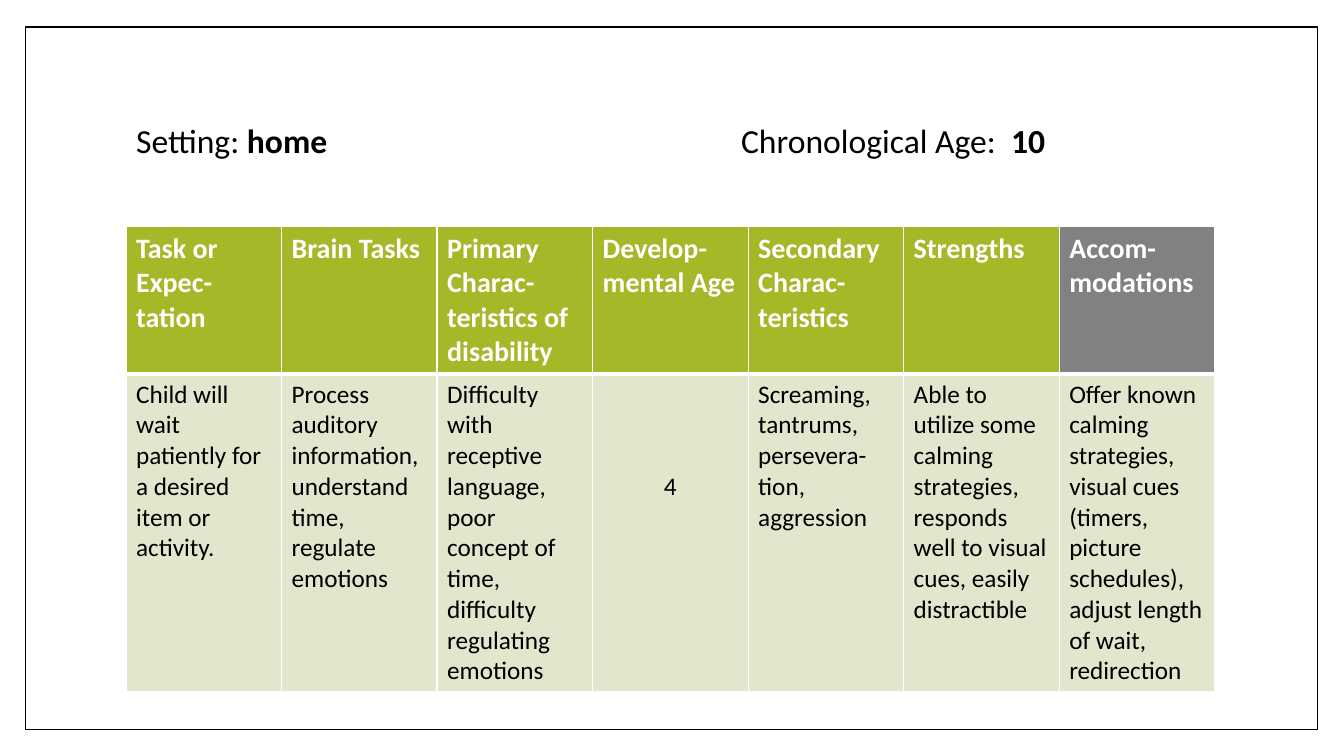
from dataclasses import dataclass

from lxml import etree
from pptx import Presentation
from pptx.dml import color as dml
from pptx.enum import shapes, text
from pptx.oxml import ns
from pptx.util import Inches, Pt

HUES = {"ink": "000000", "paper": "FFFFFF", "green": "A6B727", "gray": "818183", "pale": "E1E6CD"}
LEFT, WIDTH = 1.25, 10.8
HEAD_H, BODY_H = 1.46, 3.15
HEAD = {"size": Pt(20), "bold": True, "name": "Calibri"}
BODY = {"size": Pt(18), "bold": False, "name": "Calibri"}
TITLE = {"size": Pt(24), "name": "Calibri"}


@dataclass
class Column:
    head: str
    body: str
    hue: str = "green"
    align: int = text.PP_ALIGN.LEFT
    top: float = 0.05


COLUMNS = [
    Column("Task or Expec-tation", "Child will wait patiently for a desired item or activity."),
    Column("Brain Tasks", "Process auditory information, understand time, regulate emotions"),
    Column("Primary Charac-teristics of disability",
           "Difficulty with receptive language, poor concept of time, difficulty regulating emotions"),
    Column("Develop-mental Age", "4", align=text.PP_ALIGN.CENTER, top=0.97),
    Column("Secondary Charac-teristics", "Screaming, tantrums, persevera-tion, aggression"),
    Column("Strengths",
           "Able to utilize some calming strategies, responds well to visual cues, easily distractible"),
    Column("Accom-modations",
           "Offer known calming strategies,\nvisual cues (timers, picture schedules), "
           "adjust length of wait, redirection", hue="gray"),
]


def rgb(hue: str) -> dml.RGBColor:
    return dml.RGBColor.from_string(HUES[hue])


def style(font, values: dict, hue: str) -> None:
    for key, value in values.items():
        setattr(font, key, value)
    font.color.rgb = rgb(hue)


def edge(cell, sides: dict) -> None:
    props = cell._tc.get_or_add_tcPr()
    for spot, (side, width) in enumerate(sides.items()):
        line = etree.Element(ns.qn(f"a:ln{side}"), w=str(Pt(width)))
        fill = etree.SubElement(line, ns.qn("a:solidFill"))
        etree.SubElement(fill, ns.qn("a:srgbClr"), val=HUES["paper"])
        props.insert(spot, line)


def fill_cell(cell, words: str, values: dict, ink: str, hue: str, sides: dict) -> None:
    cell.text = words
    cell.fill.solid()
    cell.fill.fore_color.rgb = rgb(hue)
    for para in cell.text_frame.paragraphs:
        for run in para.runs:
            style(run.font, values, ink)
    edge(cell, sides)


def add_frame(slide) -> None:
    frame = slide.shapes.add_shape(
        shapes.MSO_SHAPE.RECTANGLE, Inches(0.25), Inches(0.27), Inches(12.82), Inches(6.97))
    frame.shadow.inherit = False
    frame.fill.solid()
    frame.fill.fore_color.rgb = rgb("paper")
    frame.line.color.rgb = rgb("ink")
    frame.line.width = Pt(1)
    slide.shapes.title.element.addprevious(frame.element)


def add_title(slide) -> None:
    title = slide.shapes.title
    title.left, title.top = Inches(LEFT), Inches(0.67)
    title.width, title.height = Inches(WIDTH), Inches(1.48)
    body = title.text_frame
    body.auto_size = text.MSO_AUTO_SIZE.NONE
    body.vertical_anchor = text.MSO_ANCHOR.MIDDLE
    para = body.paragraphs[0]
    para.alignment = text.PP_ALIGN.LEFT
    para.line_spacing = 0.9
    tabs = etree.SubElement(para._p.get_or_add_pPr(), ns.qn("a:tabLst"))
    etree.SubElement(tabs, ns.qn("a:tab"), pos=str(Inches(6)), algn="l")
    for words, bold in (("Setting: ", False), ("home", True),
                        ("\tChronological Age:  ", False), ("10", True)):
        run = para.add_run()
        run.text = words
        style(run.font, {**TITLE, "bold": bold}, "ink")


def add_grid(slide) -> None:
    grid = slide.shapes.add_table(
        2, len(COLUMNS), Inches(LEFT), Inches(2.25), Inches(WIDTH), Inches(HEAD_H + BODY_H)).table
    for row, height in zip(grid.rows, (HEAD_H, BODY_H)):
        row.height = Inches(height)
    for spot, col in enumerate(COLUMNS):
        grid.columns[spot].width = Inches(WIDTH / len(COLUMNS))
        fill_cell(grid.cell(0, spot), col.head, HEAD, "paper", col.hue,
                  {"L": 1, "R": 1, "T": 1, "B": 3})
        cell = grid.cell(1, spot)
        fill_cell(cell, col.body, BODY, "ink", "pale", {"L": 1, "R": 1, "T": 3, "B": 1})
        cell.margin_top = Inches(col.top)
        for para in cell.text_frame.paragraphs:
            para.alignment = col.align


def main() -> None:
    deck = Presentation()
    deck.slide_width, deck.slide_height = Inches(13.33), Inches(7.5)
    slide = deck.slides.add_slide(deck.slide_layouts[5])
    add_frame(slide)
    add_title(slide)
    add_grid(slide)
    deck.save("out.pptx")


if __name__ == "__main__":
    main()
